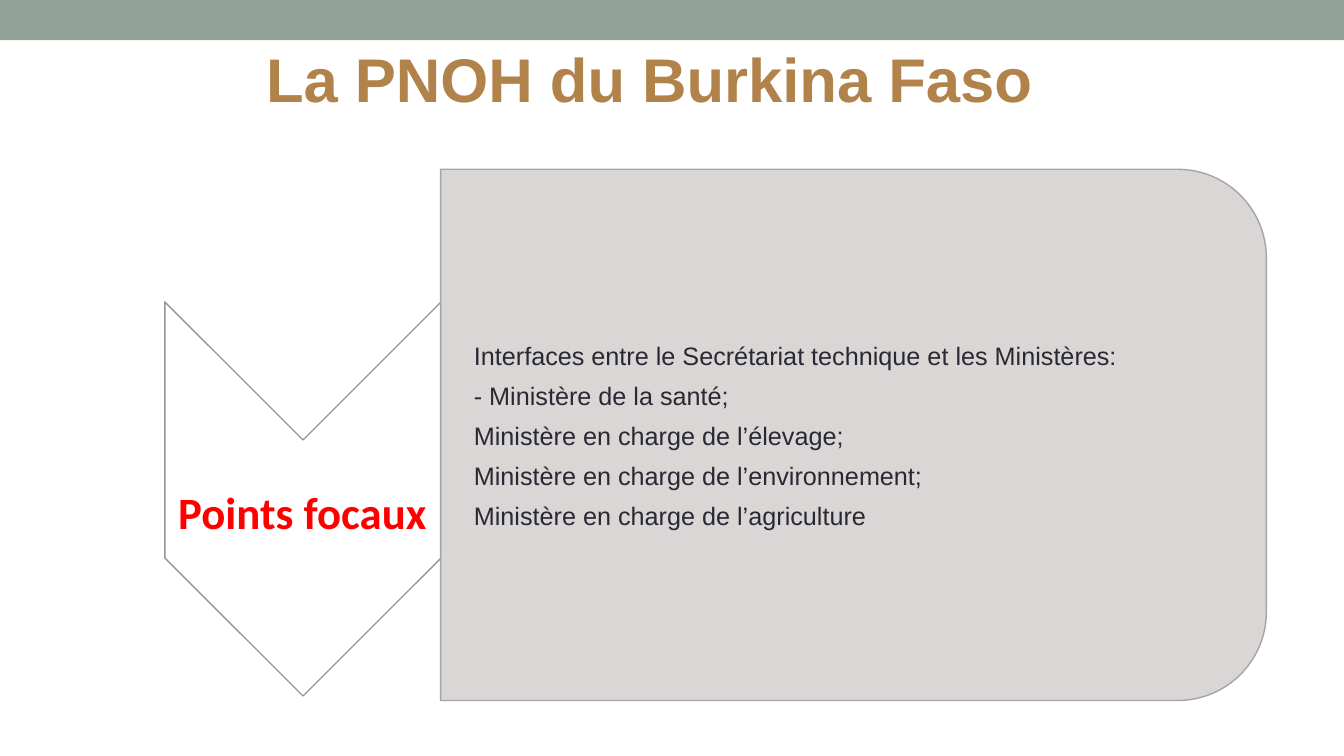
from dataclasses import dataclass

from lxml import etree
from pptx import Presentation
from pptx.dml.color import RGBColor
from pptx.enum.shapes import MSO_SHAPE
from pptx.enum.text import MSO_ANCHOR, PP_ALIGN
from pptx.oxml.ns import qn
from pptx.util import Pt

EMU_PER_PX = 9144  # 100 px to the inch
RECTANGLE = MSO_SHAPE.RECTANGLE
CHEVRON = MSO_SHAPE.CHEVRON
ROUNDED_SIDE = MSO_SHAPE.ROUND_2_SAME_RECTANGLE
TOP, MIDDLE = MSO_ANCHOR.TOP, MSO_ANCHOR.MIDDLE
CENTER, JUSTIFY = PP_ALIGN.CENTER, PP_ALIGN.JUSTIFY

COLORS = {
    "band": "93A299",
    "white": "FFFFFF",
    "chevron line": "969696",
    "panel": "D5D2D1",
    "panel line": "A5A5A5",
    "label": "FF0000",
    "body": "292934",
    "title": "B1824A",
}


@dataclass(frozen=True)
class Box:
    left: int
    top: int
    width: int
    height: int

    def emu(self) -> list[int]:
        return [v * EMU_PER_PX for v in (self.left, self.top, self.width, self.height)]


@dataclass(frozen=True)
class Block:
    kind: MSO_SHAPE
    box: Box
    fill: str
    line: str | None = None
    rotation: int = 0
    opacity: int = 100


@dataclass(frozen=True)
class Text:
    box: Box
    lines: tuple[str, ...]
    font: str
    size: int
    color: str
    bold: bool = False
    align: PP_ALIGN = CENTER
    anchor: MSO_ANCHOR = MIDDLE
    insets: tuple[int, int, int, int] = (2, 2, 2, 2)
    wrap: bool = True
    line_spacing: float = 1.0
    space_after: int = 0
    level: int = 0
    indent: int = 0


BLOCKS = (
    Block(RECTANGLE, Box(0, 0, 1333, 40), "band"),
    Block(CHEVRON, Box(105, 358, 391, 274), "white", "chevron line", rotation=90),
    Block(ROUNDED_SIDE, Box(583, 22, 527, 819), "panel", "panel line",
          rotation=90, opacity=90),
)

TEXTS = (
    Text(Box(163, 436, 274, 117), ("Points focaux",), "Calibri", 32, "label",
         bold=True, line_spacing=1.5),
    Text(Box(437, 194, 793, 476),
         ("Interfaces entre le Secrétariat technique et les Ministères:",
          "- Ministère de la santé;",
          "Ministère en charge de l’élevage;",
          "Ministère en charge de l’environnement;",
          "Ministère en charge de l’agriculture"),
         "Arial", 18, "body", align=JUSTIFY, insets=(14, 1, 1, 1),
         space_after=7, level=1, indent=19),
    Text(Box(250, 36, 789, 84), ("La PNOH du Burkina Faso",), "Arial", 44, "title",
         bold=True, anchor=TOP, insets=(10, 5, 10, 5), wrap=False, space_after=18),
)


def rgb(name: str) -> RGBColor:
    return RGBColor.from_string(COLORS[name])


def draw_block(slide, block: Block) -> None:
    shape = slide.shapes.add_shape(block.kind, *block.box.emu())
    shape.shadow.inherit = False
    shape.rotation = block.rotation
    shape.fill.solid()
    shape.fill.fore_color.rgb = rgb(block.fill)
    if block.opacity < 100:
        color = shape.element.spPr.find(qn("a:solidFill")).find(qn("a:srgbClr"))
        etree.SubElement(color, qn("a:alpha"), val=str(block.opacity * 1000))
    if block.line:
        shape.line.color.rgb = rgb(block.line)
        shape.line.width = Pt(1)
    else:
        shape.line.fill.background()


def draw_text(slide, text: Text) -> None:
    frame = slide.shapes.add_textbox(*text.box.emu()).text_frame
    frame.word_wrap = text.wrap
    frame.vertical_anchor = text.anchor
    (frame.margin_left, frame.margin_top,
     frame.margin_right, frame.margin_bottom) = (v * EMU_PER_PX for v in text.insets)
    frame.text = "\n".join(text.lines)
    for paragraph in frame.paragraphs:
        paragraph.alignment = text.align
        paragraph.level = text.level
        paragraph.line_spacing = text.line_spacing
        paragraph.space_after = Pt(text.space_after)
        properties = paragraph._p.get_or_add_pPr()
        properties.set("marL", str(text.indent * EMU_PER_PX))
        properties.set("indent", "0")
        for run in paragraph.runs:
            run.font.name = text.font
            run.font.size = Pt(text.size)
            run.font.bold = text.bold
            run.font.color.rgb = rgb(text.color)


def main() -> None:
    presentation = Presentation()
    presentation.slide_width = 1333 * EMU_PER_PX
    presentation.slide_height = 750 * EMU_PER_PX
    slide = presentation.slides.add_slide(presentation.slide_layouts[6])
    for block in BLOCKS:
        draw_block(slide, block)
    for text in TEXTS:
        draw_text(slide, text)
    presentation.save("out.pptx")


if __name__ == "__main__":
    main()
